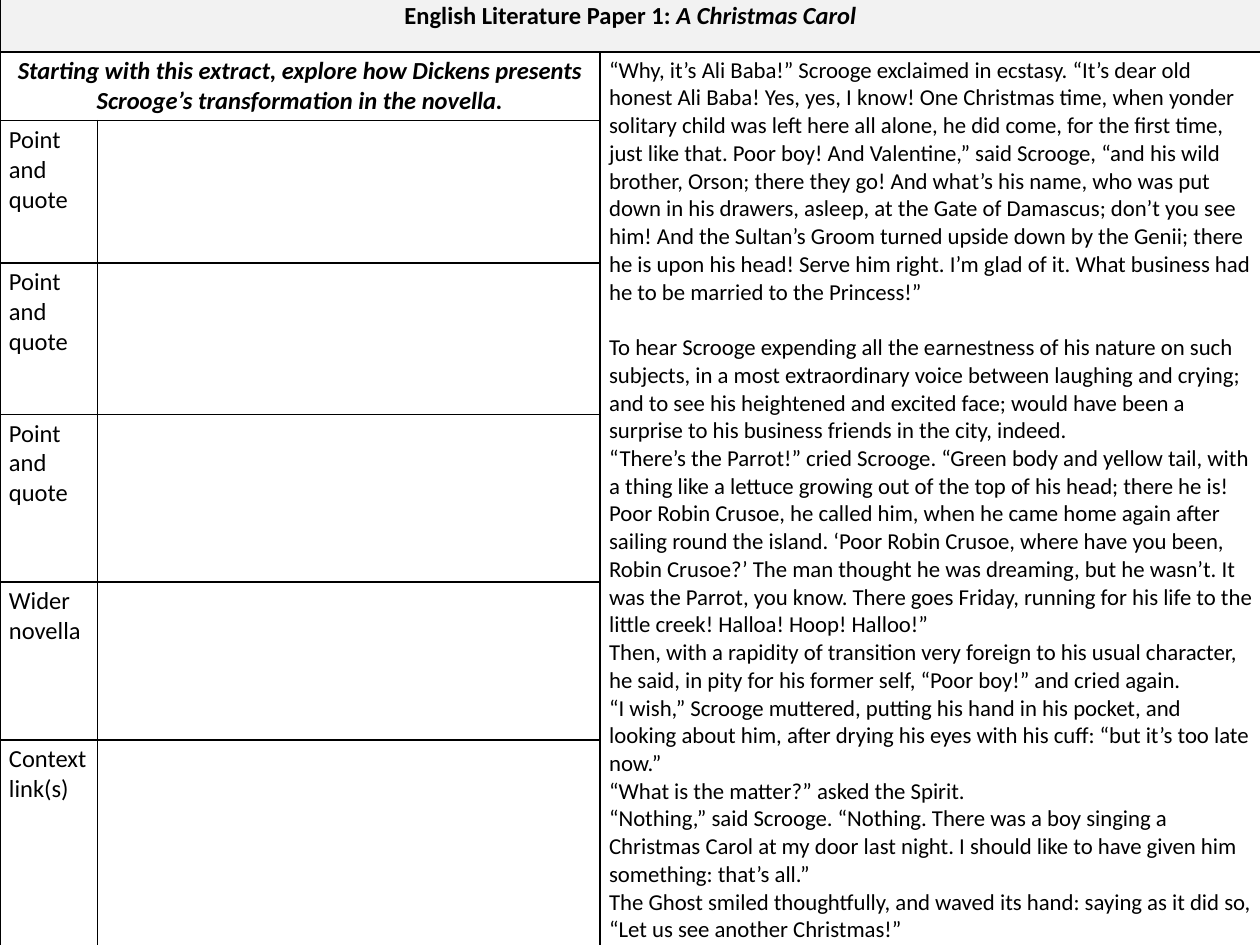
from pptx import Presentation
from pptx.dml.color import RGBColor
from pptx.enum.text import MSO_ANCHOR as Anchor, PP_ALIGN as Align
from pptx.oxml import parse_xml
from pptx.oxml.ns import nsdecls
from pptx.util import Cm, Pt

COLS = [1.97, 10.13, 13.32]
ROWS = [1.12, 1.37, 2.87, 3.05, 3.38, 3.18, 3.94]
TITLE = [("English Literature Paper 1: ", False), ("A Christmas Carol", True)]
TASK = ("Starting with this extract, explore how Dickens presents "
        "Scrooge’s transformation in the novella.")
LABELS = ["Point and quote"] * 3 + ["Wider novella", "Context link(s)"]
EXTRACT = [
    "“Why, it’s Ali Baba!” Scrooge exclaimed in ecstasy. “It’s dear old honest "
    "Ali Baba! Yes, yes, I know! One Christmas time, when yonder solitary child "
    "was left here all alone, he did come, for the first time, just like that. "
    "Poor boy! And Valentine,” said Scrooge, “and his wild brother, Orson; there "
    "they go! And what’s his name, who was put down in his drawers, asleep, at "
    "the Gate of Damascus; don’t you see him! And the Sultan’s Groom turned "
    "upside down by the Genii; there he is upon his head! Serve him right. I’m "
    "glad of it. What business had he to be married to the Princess!”",
    "To hear Scrooge expending all the earnestness of his nature on such "
    "subjects, in a most extraordinary voice between laughing and crying; and to "
    "see his heightened and excited face; would have been a surprise to his "
    "business friends in the city, indeed.",
    "“There’s the Parrot!” cried Scrooge. “Green body and yellow tail, with a "
    "thing like a lettuce growing out of the top of his head; there he is! Poor "
    "Robin Crusoe, he called him, when he came home again after sailing round "
    "the island. ‘Poor Robin Crusoe, where have you been, Robin Crusoe?’ The man "
    "thought he was dreaming, but he wasn’t. It was the Parrot, you know. There "
    "goes Friday, running for his life to the little creek! Halloa! Hoop! Halloo!”",
    "Then, with a rapidity of transition very foreign to his usual character, he "
    "said, in pity for his former self, “Poor boy!” and cried again.",
    "“I wish,” Scrooge muttered, putting his hand in his pocket, and looking "
    "about him, after drying his eyes with his cuff: “but it’s too late now.”",
    "“What is the matter?” asked the Spirit.",
    "“Nothing,” said Scrooge. “Nothing. There was a boy singing a Christmas "
    "Carol at my door last night. I should like to have given him something: "
    "that’s all.”",
    "The Ghost smiled thoughtfully, and waved its hand: saying as it did so, "
    "“Let us see another Christmas!”",
]


def color(code):
    return RGBColor.from_string(code)


def style_cell(cell):
    """Plain cell: black 1 pt borders, no fill, small margins."""
    props = cell._tc.get_or_add_tcPr()
    for side in "LRTB":
        props.append(parse_xml(
            f'<a:ln{side} {nsdecls("a")} w="12700"><a:solidFill>'
            f'<a:srgbClr val="000000"/></a:solidFill></a:ln{side}>'))
    cell.fill.background()
    cell.vertical_anchor = Anchor.TOP
    cell.margin_left = cell.margin_right = Cm(0.18)
    cell.margin_top = cell.margin_bottom = Cm(0.09)


def set_font(para, size=14, bold=False, align=Align.LEFT):
    para.alignment = align
    font = para.font
    font.name, font.size, font.bold = "Calibri", Pt(size), bold
    font.color.rgb = color("000000")


def make_grid(slide, left, top):
    frame = slide.shapes.add_table(len(ROWS), len(COLS), Cm(left), Cm(top),
                                   Cm(sum(COLS)), Cm(sum(ROWS)))
    table = frame.table
    table.first_row = table.horz_banding = False
    for col, width in zip(table.columns, COLS):
        col.width = Cm(width)
    for row, height in zip(table.rows, ROWS):
        row.height = Cm(height)
    for cell in table.iter_cells():
        style_cell(cell)
    return table


def fill_title(table):
    cell = table.cell(0, 0)
    cell.merge(table.cell(0, 2))
    cell.fill.solid()
    cell.fill.fore_color.rgb = color("F2F2F2")
    para = cell.text_frame.paragraphs[0]
    set_font(para, bold=True, align=Align.CENTER)
    for text, slant in TITLE:
        run = para.add_run()
        run.text, run.font.italic = text, slant


def fill_task(table):
    cell = table.cell(1, 0)
    cell.merge(table.cell(1, 1))
    cell.text = TASK
    para = cell.text_frame.paragraphs[0]
    set_font(para, bold=True, align=Align.CENTER)
    para.font.italic = True


def fill_labels(table):
    for row, label in enumerate(LABELS, 2):
        cell = table.cell(row, 0)
        cell.text = label
        set_font(cell.text_frame.paragraphs[0])


def fill_extract(table):
    cell = table.cell(1, 2)
    cell.merge(table.cell(len(ROWS) - 1, 2))
    cell.text = "\n".join(EXTRACT)
    paras = cell.text_frame.paragraphs
    for para in paras:
        set_font(para, size=13)
    paras[1].space_before = Pt(15.9)


def main():
    deck = Presentation()
    deck.slide_width, deck.slide_height = Cm(25.4), Cm(19.05)
    slide = deck.slides.add_slide(deck.slide_layouts[6])
    table = make_grid(slide, 0, -0.07)
    fill_title(table)
    fill_task(table)
    fill_labels(table)
    fill_extract(table)
    deck.save("out.pptx")


if __name__ == "__main__":
    main()
